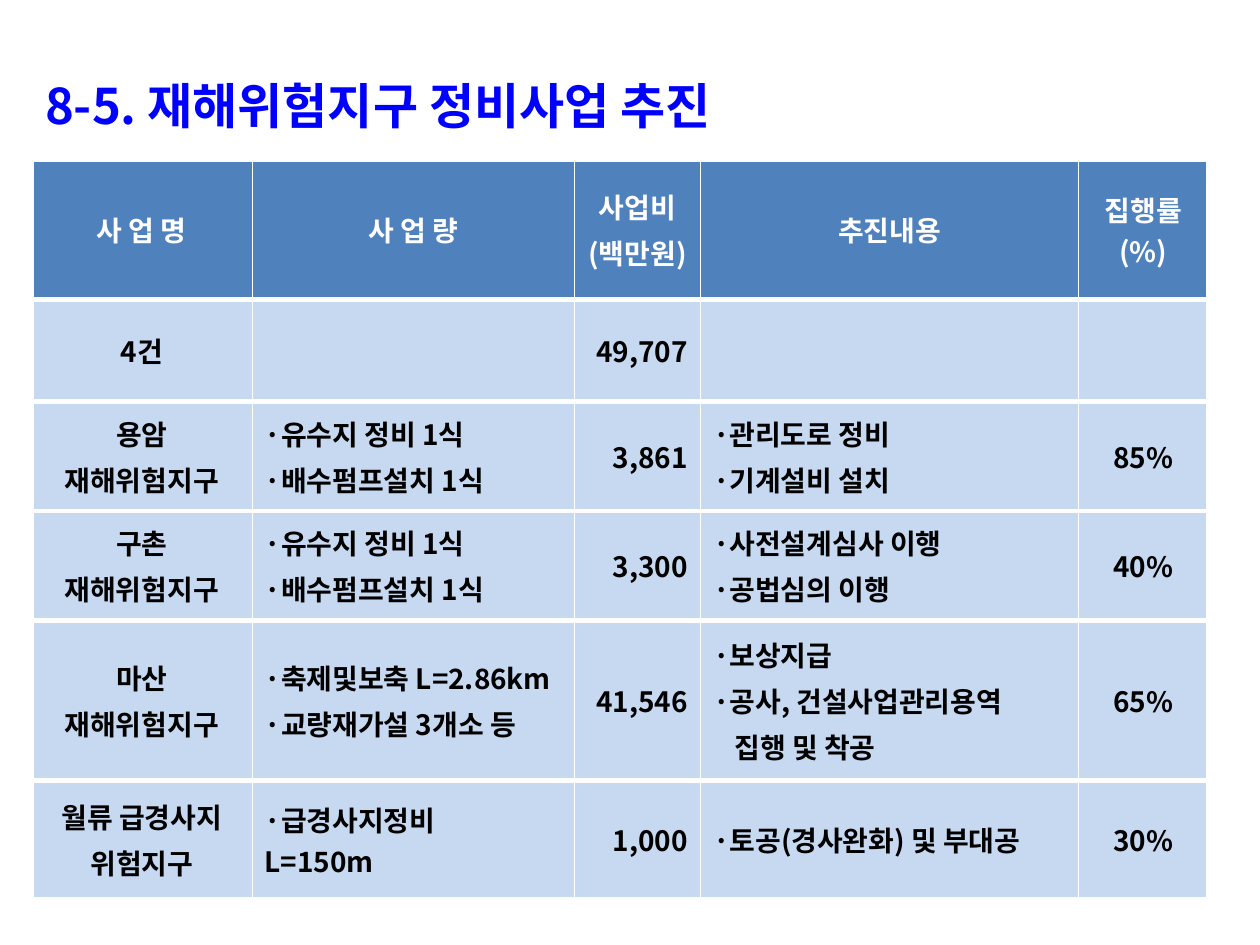
import pptx
import pptx.util
import pptx.dml.color
import pptx.enum.shapes
import pptx.enum.text
import pptx.oxml.ns
from dataclasses import dataclass
from lxml import etree

Inches, Pt = pptx.util.Inches, pptx.util.Pt
ALIGN = pptx.enum.text.PP_ALIGN
MIDDLE = pptx.enum.text.MSO_ANCHOR.MIDDLE


@dataclass(frozen=True)
class Theme:
    font: str = "Noto Sans CJK KR"
    title: str = "0000FF"
    white: str = "FFFFFF"
    black: str = "000000"
    header: str = "4F81BD"
    body: str = "C6D9F1"
    title_size: int = 28
    table_size: int = 16
    gap: float = 3.2
    thin: float = 0.25
    thick: float = 3


T = Theme()

COL_WIDTHS = [1.75, 2.56, 1, 3, 1.03]
ROW_HEIGHTS = [0.87, 0.81, 0.87, 0.87, 1.27, 0.94]
COL_ALIGNS = [ALIGN.CENTER, ALIGN.LEFT, ALIGN.RIGHT, ALIGN.LEFT, ALIGN.CENTER]

# Each cell is a list of paragraphs; "\v" breaks a line, "\t" marks a hanging line
ROWS = [
    [["사 업 명"], ["사 업 량"], ["사업비", "(백만원)"], ["추진내용"], ["집행률", "(%)"]],
    [["4건"], [], ["49,707"], [], []],
    [["용암", "재해위험지구"], ["·유수지 정비 1식", "·배수펌프설치 1식"], ["3,861"],
     ["·관리도로 정비", "·기계설비 설치"], ["85%"]],
    [["구촌", "재해위험지구"], ["·유수지 정비 1식", "·배수펌프설치 1식"], ["3,300"],
     ["·사전설계심사 이행", "·공법심의 이행"], ["40%"]],
    [["마산", "재해위험지구"], ["·축제및보축 L=2.86km", "·교량재가설 3개소 등"], ["41,546"],
     ["·보상지급", "·공사, 건설사업관리용역", "\t집행 및 착공"], ["65%"]],
    [["월류 급경사지", "위험지구"], ["·급경사지정비\vL=150m"], ["1,000"],
     ["·토공(경사완화) 및 부대공"], ["30%"]],
]


def rgb(color):
    return pptx.dml.color.RGBColor.from_string(color)


def write(p, text, *, size, color, align=ALIGN.LEFT, before=0, left=0, first=0):
    """Fill one paragraph with bold text."""
    p.alignment = align
    p.space_before = Pt(before)
    if left:
        pPr = p._p.get_or_add_pPr()
        pPr.set("marL", str(Inches(left)))
        pPr.set("indent", str(Inches(first)))
    for i, line in enumerate(text.split("\v")):
        if i:
            p.add_line_break()
        r = p.add_run()
        r.text = line
        r.font.name = T.font
        r.font.size = Pt(size)
        r.font.bold = True
        r.font.color.rgb = rgb(color)
        ea = etree.SubElement(r._r.get_or_add_rPr(), pptx.oxml.ns.qn("a:ea"))
        ea.set("typeface", T.font)


def set_borders(cell, widths):
    """Add white borders, given as widths for left, right, top and bottom."""
    qn = pptx.oxml.ns.qn
    tcPr = cell._tc.get_or_add_tcPr()
    for i, (side, width) in enumerate(zip("LRTB", widths)):
        ln = etree.Element(qn(f"a:ln{side}"), w=str(Pt(width)))
        fill = etree.SubElement(ln, qn("a:solidFill"))
        etree.SubElement(fill, qn("a:srgbClr"), val=T.white)
        tcPr.insert(i, ln)


def add_title(s, text, left, top, width, height):
    sp = s.shapes.add_shape(pptx.enum.shapes.MSO_SHAPE.RECTANGLE,
                            Inches(left), Inches(top), Inches(width), Inches(height))
    sp.shadow.inherit = False
    sp.fill.background()
    sp.line.color.rgb = rgb(T.white)
    sp.line.width = Pt(0.75)
    tf = sp.text_frame
    tf.word_wrap = False
    tf.vertical_anchor = pptx.enum.text.MSO_ANCHOR.TOP
    tf.margin_top, tf.margin_bottom = Inches(0.24), 0
    write(tf.paragraphs[0], text, size=T.title_size, color=T.title, left=0.56, first=-0.5)


def fill_cell(cell, lines, row, col):
    is_header = row == 0
    cell.fill.solid()
    cell.fill.fore_color.rgb = rgb(T.header if is_header else T.body)
    cell.vertical_anchor = MIDDLE
    set_borders(cell, [T.thick if col == 0 else T.thin,
                       T.thick if col == len(COL_WIDTHS) - 1 else T.thin,
                       T.thick, T.thick])
    tight = is_header and col == len(COL_WIDTHS) - 1
    tf = cell.text_frame
    for i, line in enumerate(lines):
        p = tf.add_paragraph() if i else tf.paragraphs[0]
        write(p, line.lstrip("\t"), size=T.table_size,
              color=T.white if is_header else T.black,
              align=ALIGN.CENTER if is_header else COL_ALIGNS[col],
              before=0 if tight else T.gap,
              left=0.17 if line.startswith("\t") else 0)


def add_project_table(s, left, top):
    frame = s.shapes.add_table(len(ROW_HEIGHTS), len(COL_WIDTHS), Inches(left), Inches(top),
                               Inches(sum(COL_WIDTHS)), Inches(sum(ROW_HEIGHTS)))
    table = frame.table
    for column, width in zip(table.columns, COL_WIDTHS):
        column.width = Inches(width)
    for row, height in zip(table.rows, ROW_HEIGHTS):
        row.height = Inches(height)
    for i, cells in enumerate(ROWS):
        for j, lines in enumerate(cells):
            fill_cell(table.cell(i, j), lines, i, j)


def main():
    prs = pptx.Presentation()
    prs.slide_width, prs.slide_height = Inches(10), Inches(7.5)
    s = prs.slides.add_slide(prs.slide_layouts[6])
    # Heading
    add_title(s, "8-5. 재해위험지구 정비사업 추진", 0.2, 0.36, 9.49, 0.78)
    # Project table
    add_project_table(s, 0.25, 1.27)
    prs.save("out.pptx")


if __name__ == "__main__":
    main()
